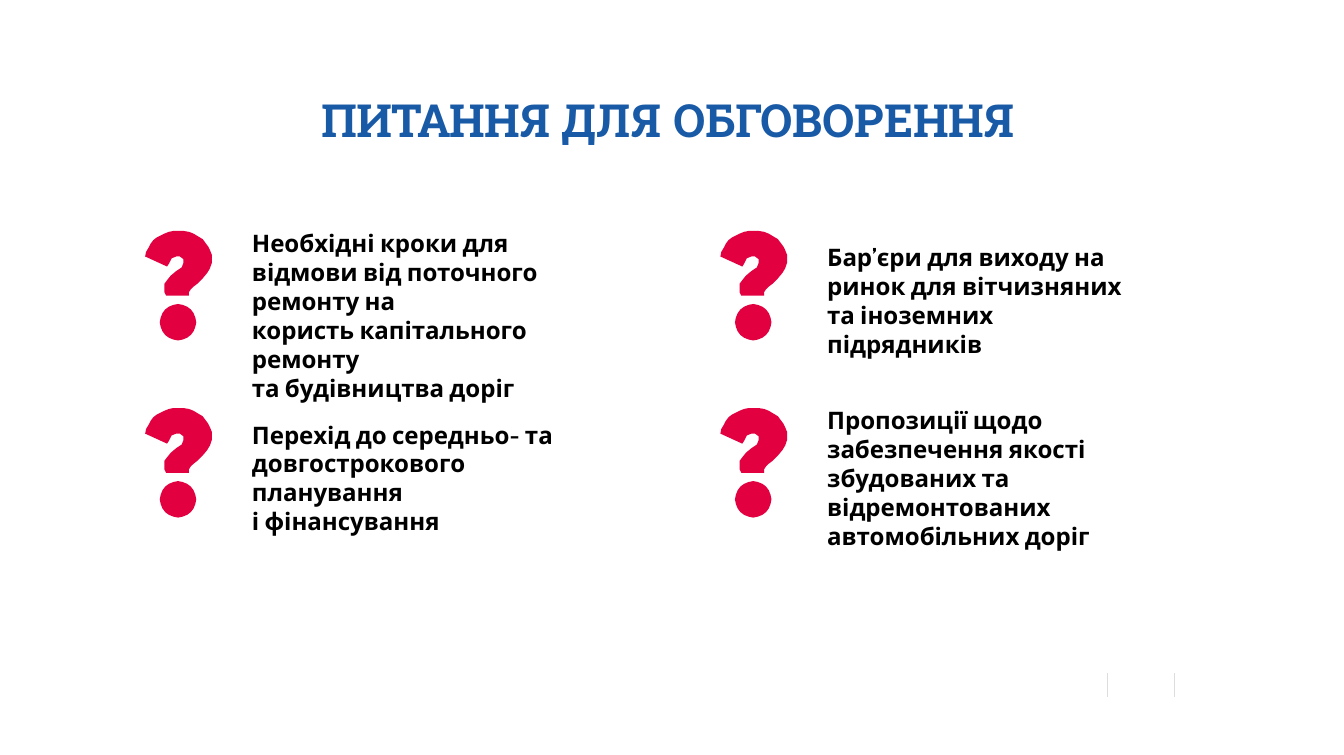
import math

import pptx
import pptx.dml.color
import pptx.enum.shapes
import pptx.enum.text
import pptx.oxml
import pptx.oxml.ns
import pptx.util

COLORS = {"title": "195AA7", "text": "000000", "mark": "E30040", "tick": "DEDDDD"}
HOOK = [
    (36, 0), (31, 0), (26, 1), (21, 3), (17, 5), (13, 7), (9, 10), (6, 14),
    (4, 18), (1, 23), (0, 28), (24, 39), (26, 36), (27, 34), (29, 30), (34, 28),
    (38, 28), (42, 31), (42, 35), (40, 40), (37, 42), (34, 44), (28, 49),
    (24, 54), (21, 58), (21, 67), (22, 69), (23, 71), (48, 71), (48, 67),
    (50, 64), (53, 61), (57, 58), (60, 55), (63, 52), (68, 46), (71, 41),
    (73, 35), (73, 28), (73, 26), (71, 21), (69, 17), (66, 13), (63, 9),
    (58, 6), (53, 3), (48, 1), (42, 0),
]
DOT = [
    (36 + 19.5 * math.cos(math.radians(angle)), 100 + 19.5 * math.sin(math.radians(angle)))
    for angle in range(0, 360, 15)
]
TITLE = [("ПИТАННЯ ", -50), ("ДЛЯ ", 10), ("ОБГОВОРЕННЯ", -20)]
QUESTIONS = [
    (0, 0, 4, [
        "Необхідні кроки для відмови від поточного ремонту на",
        "користь капітального ремонту",
        "та будівництва доріг",
    ]),
    (1, 0, 3, ["Бар’єри для виходу на ринок для вітчизняних та іноземних підрядників"]),
    (0, 1, 3, ["Перехід до середньо- та довгострокового планування", "і фінансування"]),
    (1, 1, 4, [
        "Пропозиції щодо забезпечення якості збудованих та відремонтованих автомобільних доріг",
    ]),
]


def color(name):
    return pptx.dml.color.RGBColor.from_string(COLORS[name])


class DiscussionSlide:
    left, top = 1.59, 2.53
    column_pitch, row_pitch = 6.3, 1.94
    mark_height = 1.2
    text_offset, text_width = 1.17, 3.5
    line_height, text_margin = 0.31, 0.05

    def __init__(self, deck):
        self.page = deck.slides.add_slide(deck.slide_layouts[5])

    def cell(self, column, row):
        return self.left + column * self.column_pitch, self.top + row * self.row_pitch

    def place(self, box, left, top, width, height):
        box.left, box.top, box.width, box.height = map(
            pptx.util.Inches, (left, top, width, height)
        )

    def frame(self, box):
        frame = box.text_frame
        frame.word_wrap = True
        frame.auto_size = pptx.enum.text.MSO_AUTO_SIZE.NONE
        frame.vertical_anchor = pptx.enum.text.MSO_ANCHOR.TOP
        frame.margin_left = frame.margin_right = frame.margin_bottom = 0
        frame.margin_top = pptx.util.Inches(0.02)
        return frame

    def style(self, para, font, size, shade):
        para.alignment = pptx.enum.text.PP_ALIGN.LEFT
        para.font.name = font
        para.font.size = pptx.util.Pt(size)
        para.font.bold = True
        para.font.color.rgb = color(shade)

    def title(self, parts):
        box = self.page.shapes.title
        self.place(box, 3.52, 0.99, 7.69, 0.63)
        para = self.frame(box).paragraphs[0]
        self.style(para, "Roboto Slab", 36, "title")
        for text, spacing in parts:
            span = para.add_run()
            span.text = text
            span._r.get_or_add_rPr().set("spc", str(spacing))

    def mark(self, column, row):
        left, top = self.cell(column, row)
        builder = self.page.shapes.build_freeform(
            *HOOK[0], scale=pptx.util.Inches(1) / 100
        )
        builder.add_line_segments(HOOK[1:], close=True)
        builder.move_to(*DOT[0])
        builder.add_line_segments(DOT[1:], close=True)
        shape = builder.convert_to_shape(pptx.util.Inches(left), pptx.util.Inches(top))
        shape.shadow.inherit = False
        shape.fill.solid()
        shape.fill.fore_color.rgb = color("mark")
        shape.line.fill.background()

    def question(self, column, row, lines, texts):
        left, top = self.cell(column, row)
        height = lines * self.line_height + self.text_margin
        box = self.page.shapes.add_textbox(0, 0, 0, 0)
        self.place(
            box, left + self.text_offset, top + (self.mark_height - height) / 2,
            self.text_width, height,
        )
        frame = self.frame(box)
        for index, text in enumerate(texts):
            para = frame.add_paragraph() if index else frame.paragraphs[0]
            para.text = text
            self.style(para, "Cabin", 19, "text")

    def tick(self, left):
        line = self.page.shapes.add_connector(
            pptx.enum.shapes.MSO_CONNECTOR.STRAIGHT,
            *map(pptx.util.Inches, (left, 7.37, left, 7.64)),
        )
        line.line.color.rgb = color("tick")
        line.line.width = pptx.util.Pt(0.35)
        properties = line._element.spPr
        properties.append(pptx.oxml.parse_xml(
            "<a:effectLst %s/>" % pptx.oxml.ns.nsdecls("a")
        ))


def main():
    deck = pptx.Presentation()
    deck.slide_width = pptx.util.Inches(14.72)
    deck.slide_height = pptx.util.Inches(8.27)
    slide = DiscussionSlide(deck)
    for left in (12.13, 12.86):
        slide.tick(left)
    slide.title(TITLE)
    for column, row, lines, texts in QUESTIONS:
        slide.question(column, row, lines, texts)
        slide.mark(column, row)
    deck.save("out.pptx")


if __name__ == "__main__":
    main()
